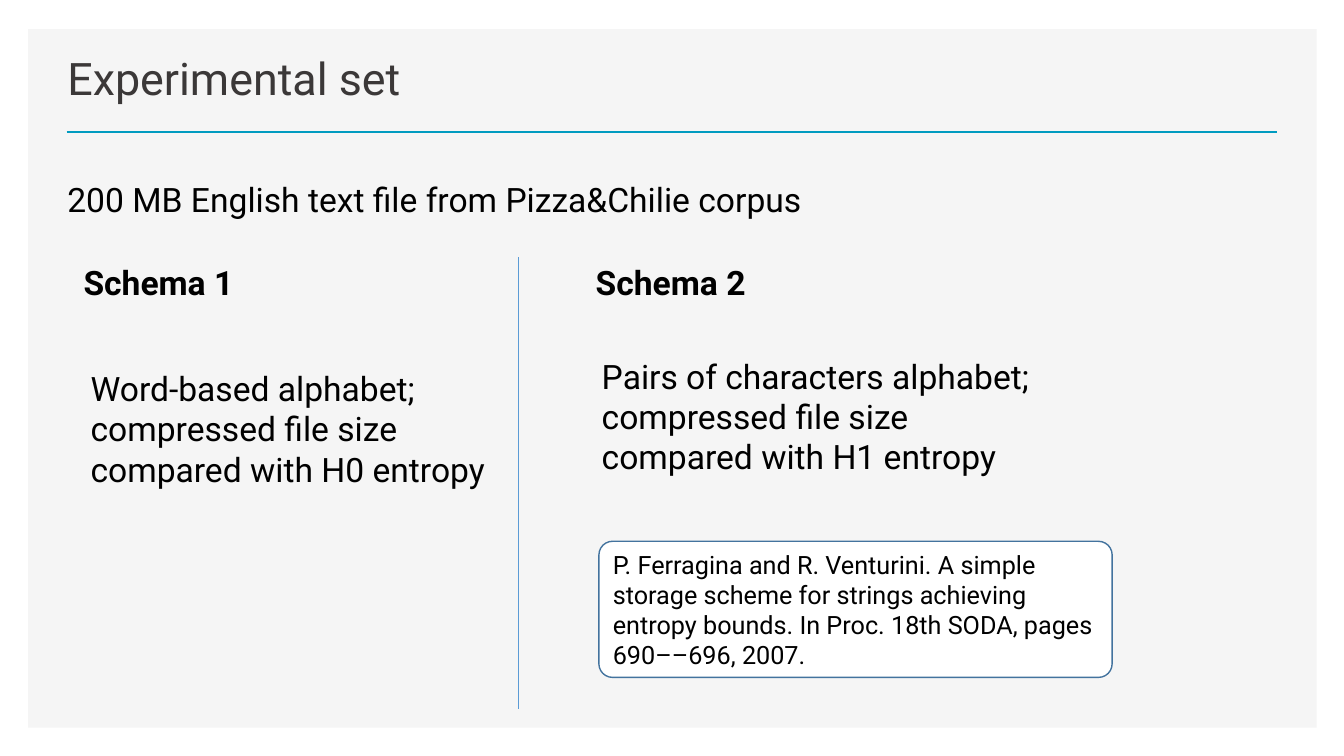
"""Build the experimental set slide comparing two compression schemas."""
import pptx
import pptx.dml.color
import pptx.enum.shapes
import pptx.enum.text
import pptx.oxml.ns
import pptx.util
from pptx.util import Inches

THEME = {
    "font": "Roboto",
    "title": 32, "body": 24, "note": 18,
    "panel": "F5F5F5", "accent": "009BC0", "divider": "5B9BD5",
    "heading": "3B3838", "text": "000000",
    "card": "FFFFFF", "card_line": "43739E",
}
TITLE = "Experimental set"
CORPUS = "200 MB English text file from Pizza&Chilie corpus"
SCHEMAS = [
    {
        "name": "Schema 1", "left": 0.73, "body_at": (0.8, 3.6, 4.18, 1.31),
        "lines": ["Word-based alphabet;", "compressed file size", "compared with H0 entropy"],
    },
    {
        "name": "Schema 2", "left": 5.81, "body_at": (5.87, 3.48, 6.16, 1.31),
        "lines": ["Pairs of characters alphabet;", "compressed file size", "compared with H1 entropy"],
    },
]
CITATION = (
    "P. Ferragina and R. Venturini. A simple storage scheme for strings achieving "
    "entropy bounds. In Proc. 18th SODA, pages 690––696, 2007."
)
ANCHOR = pptx.enum.text.MSO_ANCHOR
SHAPE = pptx.enum.shapes.MSO_SHAPE


def color(name):
    return pptx.dml.color.RGBColor.from_string(THEME[name])


def write(sp, lines, size="body", fill="text", bold=False, anchor=ANCHOR.TOP, wrap=True):
    tf = sp.text_frame
    tf.word_wrap = wrap
    tf.vertical_anchor = anchor
    p = tf.paragraphs[0]
    p.alignment = pptx.enum.text.PP_ALIGN.LEFT
    for i, line in enumerate(lines):
        if i:
            p.add_line_break()
        r = p.add_run()
        r.text = line
        r.font.name = THEME["font"]
        r.font.size = pptx.util.Pt(THEME[size])
        r.font.bold = bold
        r.font.color.rgb = color(fill)


def add_text(s, at, lines, **style):
    sp = s.shapes.add_textbox(*map(Inches, at))
    write(sp, lines, **style)


def add_box(s, kind, at, fill):
    sp = s.shapes.add_shape(kind, *map(Inches, at))
    sp.shadow.inherit = False
    sp.fill.solid()
    sp.fill.fore_color.rgb = color(fill)
    sp.line.fill.background()
    return sp


def add_line(s, ends, stroke, width):
    kind = pptx.enum.shapes.MSO_CONNECTOR.STRAIGHT
    sp = s.shapes.add_connector(kind, *map(Inches, ends))
    sp.line.color.rgb = color(stroke)
    sp.line.width = pptx.util.Pt(width)
    props = sp._element.spPr
    props.append(props.makeelement(pptx.oxml.ns.qn("a:effectLst"), {}))


def main():
    prs = pptx.Presentation()
    prs.slide_width, prs.slide_height = Inches(13.33), Inches(7.5)
    s = prs.slides.add_slide(prs.slide_layouts[6])

    add_box(s, SHAPE.RECTANGLE, (0.28, 0.29, 12.78, 6.93), "panel")
    add_line(s, (0.66, 1.31, 12.67, 1.31), "accent", 2)
    add_text(s, (0.57, 0.49, 11.93, 0.6), [TITLE],
             size="title", fill="heading", anchor=ANCHOR.BOTTOM)
    add_text(s, (0.57, 1.73, 7.5, 0.5), [CORPUS], wrap=False)
    add_line(s, (5.14, 2.55, 5.14, 7.03), "divider", 0.5)

    for schema in SCHEMAS:
        add_text(s, (schema["left"], 2.55, 1.71, 0.5), [schema["name"]], bold=True, wrap=False)
        add_text(s, schema["body_at"], schema["lines"])

    card = add_box(s, SHAPE.ROUNDED_RECTANGLE, (5.94, 5.37, 5.09, 1.35), "card")
    card.adjustments[0] = 0.1
    card.line.color.rgb = color("card_line")
    card.line.width = pptx.util.Pt(1)
    write(card, [CITATION], size="note", anchor=ANCHOR.MIDDLE)

    prs.save("out.pptx")


if __name__ == "__main__":
    main()
